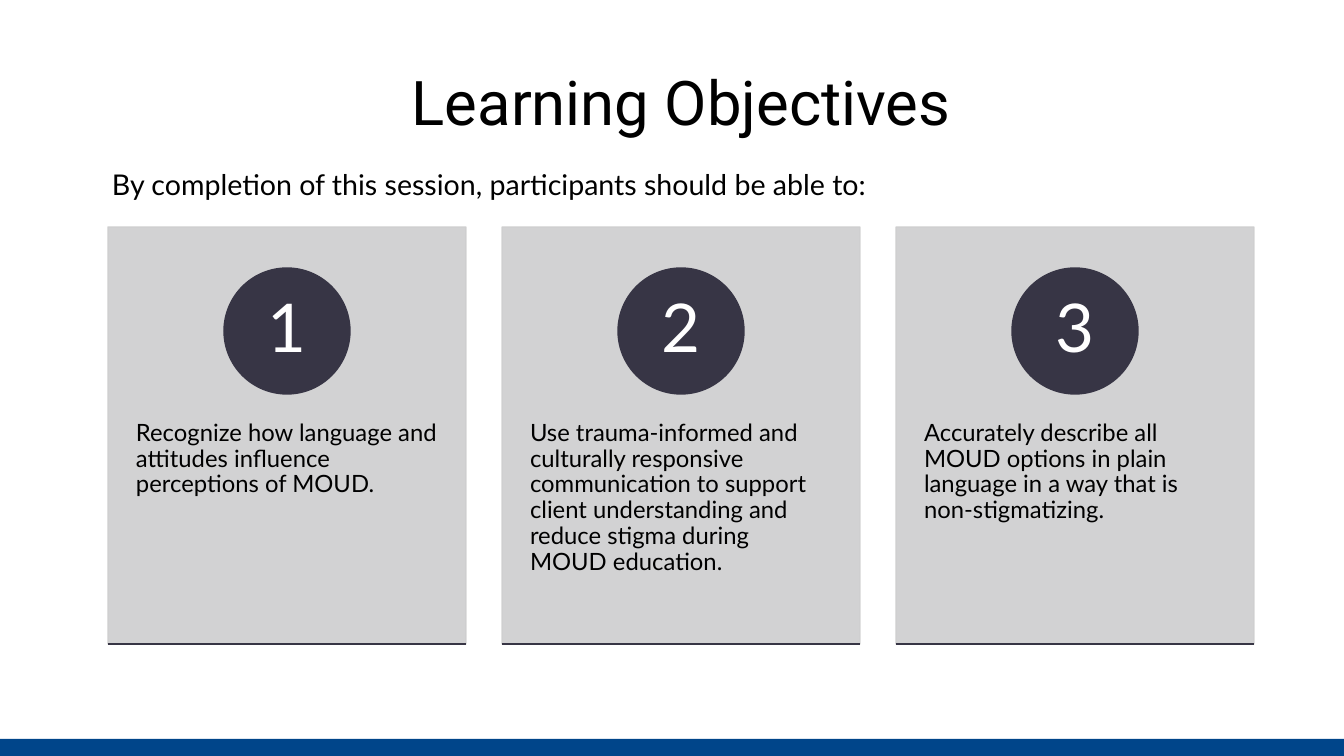
from dataclasses import dataclass

from lxml import etree
from pptx import Presentation
from pptx.dml.color import RGBColor
from pptx.enum.shapes import MSO_CONNECTOR as CONNECTOR, MSO_SHAPE as SHAPE
from pptx.enum.text import MSO_ANCHOR as ANCHOR, MSO_AUTO_SIZE as AUTO_SIZE, PP_ALIGN as ALIGN
from pptx.oxml.ns import qn
from pptx.util import Pt

PX = 914400 / 100.8


@dataclass(frozen=True)
class Theme:
    black: RGBColor = RGBColor.from_string("000000")
    white: RGBColor = RGBColor.from_string("FFFFFF")
    card: RGBColor = RGBColor.from_string("CECECF")
    dark: RGBColor = RGBColor.from_string("373545")
    bar: RGBColor = RGBColor.from_string("00458A")
    heading_font: str = "Roboto"
    body_font: str = "Lato"
    title_size: float = 44
    intro_size: float = 20.4
    card_size: float = 17
    number_size: float = 48


theme = Theme()


def write_text(shape, box, text, size, font=theme.body_font, color=theme.black,
               align=ALIGN.LEFT, anchor=ANCHOR.TOP, spacing=0.9, after=0, insets=(10, 5)):
    """Place a text shape at box (px) and fill it with one formatted paragraph."""
    shape.left, shape.top, shape.width, shape.height = [round(n * PX) for n in box]
    frame = shape.text_frame
    frame.word_wrap = True
    frame.auto_size = AUTO_SIZE.NONE
    frame.vertical_anchor = anchor
    frame.margin_left = frame.margin_right = round(insets[0] * PX)
    frame.margin_top = frame.margin_bottom = round(insets[1] * PX)
    paragraph = frame.paragraphs[0]
    properties = paragraph._p.get_or_add_pPr()
    properties.set("marL", "0")
    properties.set("indent", "0")
    etree.SubElement(properties, qn("a:buNone"))
    paragraph.alignment = align
    paragraph.line_spacing = spacing
    paragraph.space_before = Pt(0)
    paragraph.space_after = Pt(after)
    run = paragraph.add_run()
    run.text = text
    run.font.name = font
    run.font.size = Pt(size)
    run.font.color.rgb = color


def add_filled(shapes, kind, box, color, alpha=100, outlined=True):
    """Add a preset shape at box (px) with fill and outline in one colour."""
    shape = shapes.add_shape(kind, *[round(n * PX) for n in box])
    shape.shadow.inherit = False
    shape.fill.solid()
    shape.fill.fore_color.rgb = color
    if outlined:
        shape.line.color.rgb = color
        shape.line.width = Pt(1)
    else:
        shape.line.fill.background()
    if alpha < 100:
        for color_element in shape._element.spPr.iter(qn("a:srgbClr")):
            etree.SubElement(color_element, qn("a:alpha"), val=str(alpha * 1000))


presentation = Presentation()
presentation.slide_width = round(1344 * PX)
presentation.slide_height = round(756 * PX)
slide = presentation.slides.add_slide(presentation.slide_layouts[1])

write_text(slide.shapes.title, (102, 33, 1159, 146), "Learning Objectives", theme.title_size,
           font=theme.heading_font, align=ALIGN.CENTER, anchor=ANCHOR.MIDDLE)
write_text(slide.placeholders[1], (102, 160, 1159, 45),
           "By completion of this session, participants should be able to:",
           theme.intro_size, spacing=1.05, after=10)

objectives = [
    "Recognize how language and attitudes influence perceptions of MOUD.",
    "Use trauma-informed and culturally responsive communication to support "
    "client understanding and reduce stigma during MOUD education.",
    "Accurately describe all MOUD options in plain language in a way that is non-stigmatizing.",
]
CARD_LEFT, CARD_TOP, CARD_WIDTH, CARD_HEIGHT, CARD_PITCH = 108, 227, 358, 417, 394
CIRCLE, NUMBER_BOX = 126, 90
CIRCLE_TOP = 268

for index, objective in enumerate(objectives):
    left = CARD_LEFT + index * CARD_PITCH
    center = left + CARD_WIDTH // 2
    bottom = CARD_TOP + CARD_HEIGHT
    shapes = slide.shapes.add_group_shape().shapes

    add_filled(shapes, SHAPE.RECTANGLE, (left, CARD_TOP, CARD_WIDTH, CARD_HEIGHT),
               theme.card, alpha=90)
    write_text(shapes.add_textbox(0, 0, 0, 0), (left, 385, CARD_WIDTH, 250), objective,
               theme.card_size, insets=(28, 36))

    add_filled(shapes, SHAPE.OVAL, (center - CIRCLE // 2, CIRCLE_TOP, CIRCLE, CIRCLE), theme.dark)
    number_top = CIRCLE_TOP + (CIRCLE - NUMBER_BOX) // 2
    write_text(shapes.add_textbox(0, 0, 0, 0),
               (center - NUMBER_BOX // 2, number_top, NUMBER_BOX, NUMBER_BOX), str(index + 1),
               theme.number_size, color=theme.white, align=ALIGN.CENTER,
               anchor=ANCHOR.MIDDLE, insets=(10, 1))

    ends = (left, bottom, left + CARD_WIDTH, bottom)
    base_line = shapes.add_connector(CONNECTOR.STRAIGHT, *[round(n * PX) for n in ends])
    base_line.line.color.rgb = theme.dark
    base_line.line.width = Pt(1)
    etree.SubElement(base_line._element.spPr, qn("a:effectLst"))

add_filled(slide.shapes, SHAPE.RECTANGLE, (0, 739, 1344, 17), theme.bar, outlined=False)

presentation.save("out.pptx")
